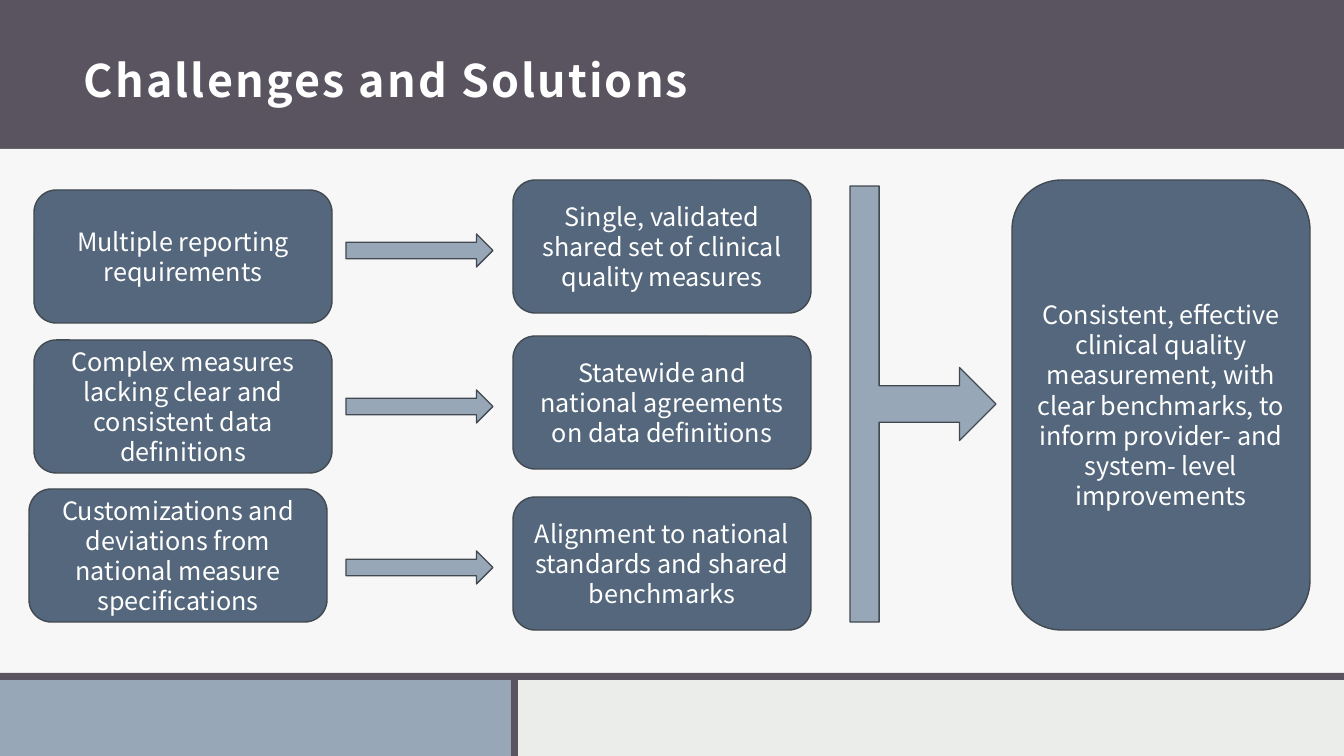
from dataclasses import dataclass
from pptx import Presentation
from pptx import util as u
from pptx.dml.color import RGBColor
from pptx.enum import shapes, text

TITLE = "Challenges and Solutions"
CHALLENGES = [
    (34, 190, "Multiple reporting requirements"),
    (34, 340, "Complex measures lacking clear and consistent data definitions"),
    (29, 489, "Customizations and deviations from national measure specifications"),
]
SOLUTIONS = [
    (513, 180, "Single, validated shared set of clinical quality measures"),
    (513, 336, "Statewide and national agreements on data definitions"),
    (513, 497, "Alignment to national standards and shared benchmarks"),
]
OUTCOME = (
    "Consistent, effective clinical quality measurement, with clear benchmarks, "
    "to inform provider- and system- level improvements"
)


@dataclass(frozen=True)
class Theme:
    font: str = "Noto Sans CJK JP"
    title_size: float = 32
    body_size: float = 18
    body_leading: float = 21.6
    outline_width: float = 1
    white: str = "FFFFFF"
    dark: str = "595460"
    page: str = "EBEDEB"
    pane: str = "F7F7F7"
    footer: str = "EAEDE9"
    accent: str = "97A7B8"
    box: str = "54677C"
    outline: str = "424951"


T = Theme()
W, H = 1344, 756
BOX_W, BOX_H = 298, 133
ARROW_X, ARROW_W, ARROW_H, ARROW_DROP = 346, 147, 33, 4
HEADER_H, FOOTER_Y, RULE, DIVIDER_X = 149, 673, 7, 511
BANDS = [
    (0, 0, W, HEADER_H, T.dark),
    (0, HEADER_H, W, FOOTER_Y - HEADER_H, T.pane),
    (0, FOOTER_Y, DIVIDER_X, H - FOOTER_Y, T.accent),
    (DIVIDER_X, FOOTER_Y, W - DIVIDER_X, H - FOOTER_Y, T.footer),
    (0, FOOTER_Y, W, RULE, T.dark),
    (DIVIDER_X, FOOTER_Y, RULE, H - FOOTER_Y, T.dark),
]
MSO = shapes.MSO_SHAPE


def px(n):
    return u.Emu(round(n * 914400 / 100.8))


def rgb(value):
    return RGBColor.from_string(value)


def add_shape(s, kind, x, y, w, h, fill, outline=None):
    sp = s.shapes.add_shape(kind, px(x), px(y), px(w), px(h))
    sp.shadow.inherit = False
    sp.fill.solid()
    sp.fill.fore_color.rgb = rgb(fill)
    if outline:
        sp.line.color.rgb = rgb(outline)
        sp.line.width = u.Pt(T.outline_width)
    else:
        sp.line.fill.background()
    return sp


def add_run(p, words, size, bold=False):
    r = p.add_run()
    r.text = words
    r.font.name = T.font
    r.font.size = u.Pt(size)
    r.font.bold = bold
    r.font.color.rgb = rgb(T.white)
    return r


def add_box(s, x, y, words, h=BOX_H):
    sp = add_shape(s, MSO.ROUNDED_RECTANGLE, x, y, BOX_W, h, T.box, T.outline)
    tf = sp.text_frame
    tf.word_wrap = True
    tf.vertical_anchor = text.MSO_ANCHOR.MIDDLE
    p = tf.paragraphs[0]
    p.alignment = text.PP_ALIGN.CENTER
    p.line_spacing = u.Pt(T.body_leading)
    add_run(p, words, T.body_size)


def add_title(s):
    sp = s.shapes.add_textbox(px(72), px(10), px(1246), px(129))
    tf = sp.text_frame
    tf.word_wrap = True
    tf.vertical_anchor = text.MSO_ANCHOR.MIDDLE
    tf.margin_left = tf.margin_right = px(12)
    tf.margin_top, tf.margin_bottom = px(20), px(10)
    r = add_run(tf.paragraphs[0], TITLE, T.title_size, bold=True)
    r.font._element.set("spc", "150")


def main():
    prs = Presentation()
    prs.slide_width, prs.slide_height = px(W), px(H)
    s = prs.slides.add_slide(prs.slide_layouts[6])
    s.background.fill.solid()
    s.background.fill.fore_color.rgb = rgb(T.page)
    for x, y, w, h, fill in BANDS:
        add_shape(s, MSO.RECTANGLE, x, y, w, h, fill)
    add_title(s)

    for x, y, words in CHALLENGES + SOLUTIONS:
        add_box(s, x, y, words)
    for _, y, _ in SOLUTIONS:
        arrow_y = y + (BOX_H - ARROW_H) / 2 + ARROW_DROP
        add_shape(s, MSO.RIGHT_ARROW, ARROW_X, arrow_y, ARROW_W, ARROW_H,
                  T.accent, T.outline)

    top, bottom = SOLUTIONS[0][1], SOLUTIONS[-1][1] + BOX_H
    add_box(s, 1012, top, OUTCOME, bottom - top)
    merge = add_shape(s, MSO.RIGHT_ARROW_CALLOUT, 850, 186, 146, 436,
                      T.accent, T.outline)
    for i, value in enumerate((0.25, 0.25, 0.25, 0.2)):
        merge.adjustments[i] = value
    prs.save("out.pptx")


if __name__ == "__main__":
    main()
